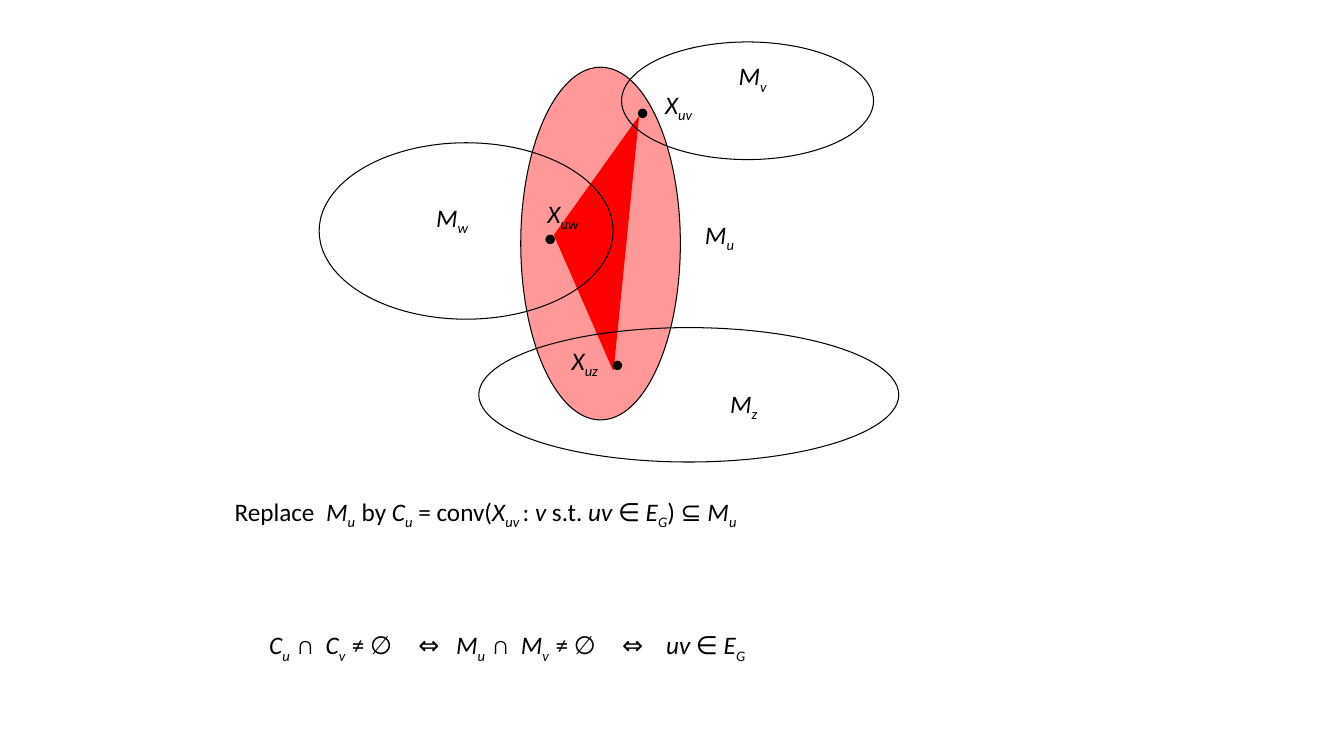
from lxml import etree
from pptx import Presentation
from pptx import util as u
from pptx.dml.color import RGBColor
from pptx.enum import shapes, text
from pptx.oxml.ns import qn

PX = 9525
THEME = {
    "font": "Calibri",
    "size": u.Pt(18),
    "line": u.Pt(0.75),
    "ink": RGBColor(0x00, 0x00, 0x00),
    "pink": RGBColor(0xFF, 0x99, 0x99),
    "red": RGBColor(0xFF, 0x00, 0x00),
}


def paint(shape, fill, line):
    shape.shadow.inherit = False
    if fill is None:
        shape.fill.background()
    else:
        shape.fill.solid()
        shape.fill.fore_color.rgb = fill
    shape.line.color.rgb = line
    shape.line.width = THEME["line"]


def add_formula(left, top, width, runs, tab_stops=()):
    """Write runs of (text, style): "" is upright, "i" italic, "sub" italic subscript."""
    box = slide.shapes.add_textbox(left * PX, top * PX, width * PX, 38 * PX)
    frame = box.text_frame
    frame.word_wrap = False
    frame.auto_size = text.MSO_AUTO_SIZE.SHAPE_TO_FIT_TEXT
    paragraph = frame.paragraphs[0]
    if tab_stops:
        tab_list = etree.SubElement(paragraph._p.get_or_add_pPr(), qn("a:tabLst"))
        for stop in tab_stops:
            etree.SubElement(tab_list, qn("a:tab"), pos=str(stop * PX), algn="l")
    for words, style in runs:
        run = paragraph.add_run()
        run.text = words
        run.font.name = THEME["font"]
        run.font.size = THEME["size"]
        run.font.color.rgb = THEME["ink"]
        run.font.italic = style != ""
        if style == "sub":
            run._r.get_or_add_rPr().set("baseline", "-25000")


presentation = Presentation()
presentation.slide_width = 1280 * PX
presentation.slide_height = 720 * PX
slide = presentation.slides.add_slide(presentation.slide_layouts[6])

# The set M_u and the hull C_u inside it
set_u = slide.shapes.add_shape(
    shapes.MSO_SHAPE.OVAL, 496 * PX, 64 * PX, 152 * PX, 336 * PX)
paint(set_u, THEME["pink"], THEME["ink"])

builder = slide.shapes.build_freeform(528, 224, scale=PX)
builder.add_line_segments([(608, 112), (584, 352)], close=True)
paint(builder.convert_to_shape(), THEME["red"], THEME["red"])

# The neighbouring sets M_w, M_z, M_v and the three chosen points
neighbours = [(304, 136, 280, 168), (456, 312, 400, 128), (592, 40, 240, 112)]
points = [(520, 224, 8, 8), (584, 344, 8, 8), (608, 104, 8, 8)]
for ovals, fill in ((neighbours, None), (points, THEME["ink"])):
    for bounds in ovals:
        oval = slide.shapes.add_shape(
            shapes.MSO_SHAPE.OVAL, *(length * PX for length in bounds))
        paint(oval, fill, THEME["ink"])

# Labels: left, top, width, letter, index
labels = [
    (662, 204, 48, "M", "u"),
    (694, 53, 47, "M", "v"),
    (406, 188, 52, "M", "w"),
    (686, 365, 46, "M", "z"),
    (512, 184, 52, "X", "uw"),
    (535, 324, 46, "X", "uz"),
    (624, 80, 47, "X", "uv"),
]
for left, top, width, letter, index in labels:
    add_formula(left, top, width, [(letter, "i"), (index, "sub")])

add_formula(214, 468, 507, [
    ("Replace  ", ""), ("M", "i"), ("u  ", "sub"), ("by ", ""),
    ("C", "i"), ("u", "sub"), (" = conv(", ""), ("X", "i"), ("uv ", "sub"),
    (": ", ""), ("v ", "i"), ("s.t.", ""), (" uv ", "i"), ("∈", ""),
    (" E", "i"), ("G", "sub"), (") ⊆ ", ""), ("M", "i"), ("u", "sub"),
])

equivalence = []
for letter in "CM":
    equivalence += [
        (letter, "i"), ("u  ", "sub"), ("∩  ", ""), (letter, "i"), ("v  ", "sub"),
        ("≠ ", ""), ("∅", "i"), ("\t⇔\t", ""),
    ]
equivalence += [("uv ", "i"), ("∈", ""), (" E", "i"), ("G", "sub")]
add_formula(247, 595, 498, equivalence, tab_stops=(142, 178, 336, 378))

presentation.save("out.pptx")
